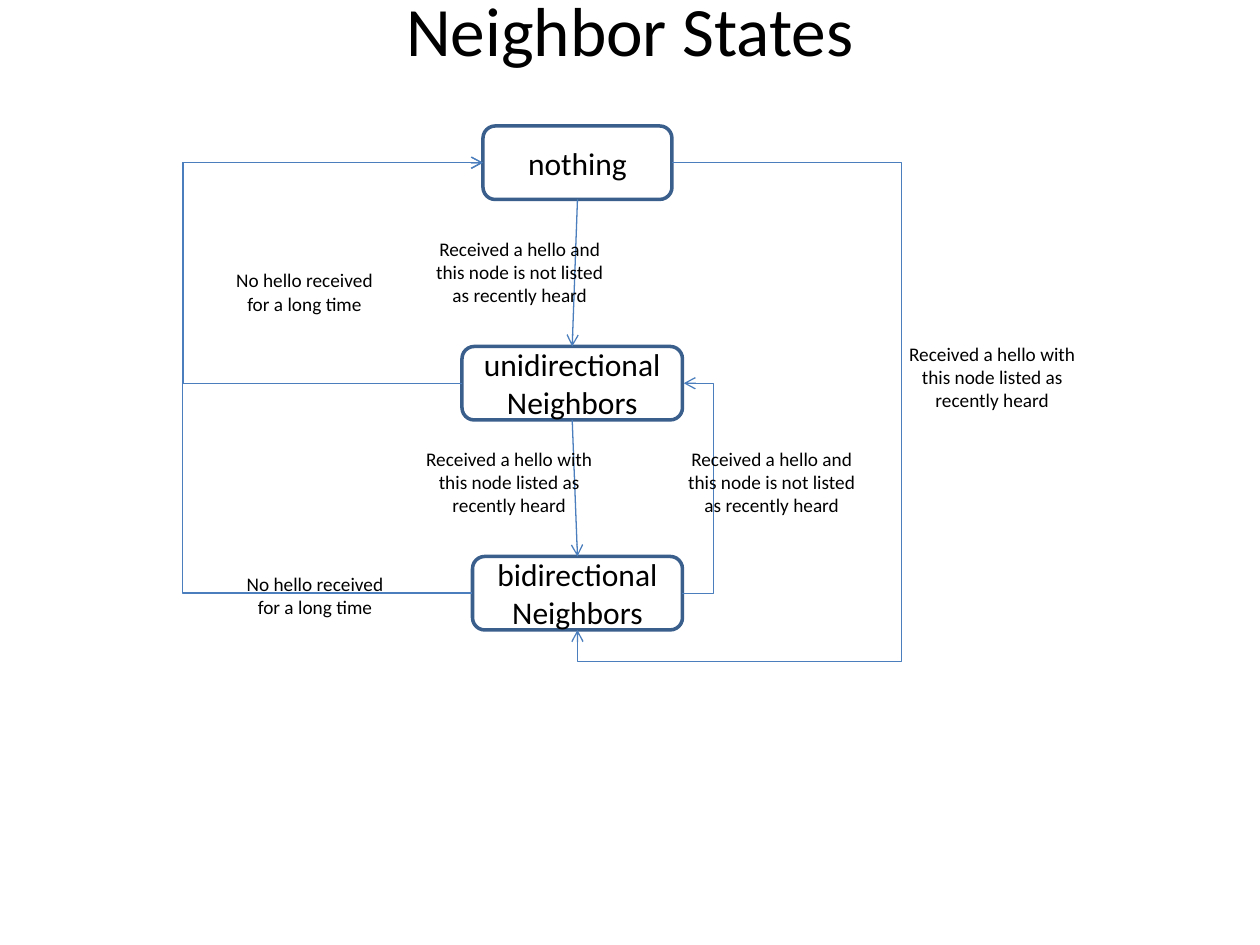
from lxml import etree
from pptx import Presentation
from pptx.dml.color import RGBColor
from pptx.enum.shapes import MSO_CONNECTOR, MSO_SHAPE
from pptx.enum.text import MSO_ANCHOR, MSO_AUTO_SIZE, PP_ALIGN
from pptx.oxml.ns import qn
from pptx.util import Inches, Pt

STRAIGHT, ELBOW = MSO_CONNECTOR.STRAIGHT, MSO_CONNECTOR.ELBOW
ROUNDED = MSO_SHAPE.ROUNDED_RECTANGLE
CENTER, MIDDLE = PP_ALIGN.CENTER, MSO_ANCHOR.MIDDLE
TOP, LEFT, BOTTOM, RIGHT = range(4)
COLORS = {"text": "000000", "border": "3A5F8C", "arrow": "4B7EBC"}
FONT = "Calibri"
TITLE_ONLY_LAYOUT = 5
CELLS_PER_INCH = 12
STATE_HEIGHT = 7

NOT_LISTED = "Received a hello and this node is not listed as recently heard"
LISTED = "Received a hello with this node listed as recently heard"
SILENT = "No hello received for a long time"
STATES = {
    "nothing": ("nothing", 46, 12, 18),
    "unidirectional": ("unidirectional\vNeighbors", 44, 33, 21),
    "bidirectional": ("bidirectional\vNeighbors", 45, 53, 20),
}
LABELS = [
    (NOT_LISTED, 40, 22, 19, 8),
    (LISTED, 39, 42, 19, 8),
    (SILENT, 21, 25, 16, 5.6),
    (LISTED, 85, 32, 19, 8),
    (SILENT, 22, 53.9, 16, 5.6),
    (NOT_LISTED, 64, 42, 19, 8),
]
LEFT_LANE, RIGHT_LANE, RETURN_LANE, BOTTOM_LANE = 17.4, 85.9, 68, 63


def grid(cells):
    return Inches(cells / CELLS_PER_INCH)


def color(name):
    return RGBColor.from_string(COLORS[name])


def write(text_frame, text, size):
    text_frame.text = text
    paragraph = text_frame.paragraphs[0]
    paragraph.alignment = CENTER
    paragraph.font.name = FONT
    paragraph.font.size = Pt(size)
    paragraph.font.color.rgb = color("text")


def set_title(slide, text):
    title = slide.shapes.title
    title.left, title.top = grid(6), grid(-1)
    title.width, title.height = grid(108), grid(7.5)
    title.text_frame.auto_size = MSO_AUTO_SIZE.NONE
    title.text_frame.vertical_anchor = MIDDLE
    write(title.text_frame, text, 39.6)


def add_state(slide, text, column, row, columns):
    shape = slide.shapes.add_shape(
        ROUNDED, grid(column), grid(row), grid(columns), grid(STATE_HEIGHT))
    shape.shadow.inherit = False
    shape.fill.background()
    shape.line.color.rgb = color("border")
    shape.line.width = Pt(2)
    shape.text_frame.word_wrap = True
    shape.text_frame.vertical_anchor = MIDDLE
    write(shape.text_frame, text, 18)
    return shape


def add_label(slide, text, column, row, columns, rows):
    label = slide.shapes.add_textbox(
        grid(column), grid(row), grid(columns), grid(rows))
    label.text_frame.word_wrap = True
    write(label.text_frame, text, 11)


def add_arrow(slide, kind, source, source_side, target, target_side):
    connector = slide.shapes.add_connector(kind, 0, 0, 0, 0)
    connector.begin_connect(source, source_side)
    connector.end_connect(target, target_side)
    connector.line.color.rgb = color("arrow")
    connector.line.width = Pt(0.75)
    etree.SubElement(connector.line._get_or_add_ln(), qn("a:tailEnd"), type="arrow")
    etree.SubElement(connector._element.spPr, qn("a:effectLst"))
    return connector


def bend(connector, lane_column, lane_row=None):
    if connector.begin_x == connector.end_x:
        connector.end_x += Inches(0.01)
    shares = [(grid(lane_column) - connector.begin_x)
              / (connector.end_x - connector.begin_x)]
    if lane_row is not None:
        shares.append((grid(lane_row) - connector.begin_y)
                      / (connector.end_y - connector.begin_y))
    geometry = connector._element.spPr.find(qn("a:prstGeom"))
    geometry.set("prst", f"bentConnector{len(shares) + 2}")
    adjustments = geometry.find(qn("a:avLst"))
    for number, share in enumerate(shares, 1):
        etree.SubElement(adjustments, qn("a:gd"), name=f"adj{number}",
                         fmla=f"val {round(share * 100000)}")


def main():
    presentation = Presentation()
    presentation.slide_width, presentation.slide_height = Inches(10), Inches(7.5)
    slide = presentation.slides.add_slide(
        presentation.slide_layouts[TITLE_ONLY_LAYOUT])
    set_title(slide, "Neighbor States")

    states = {name: add_state(slide, *state) for name, state in STATES.items()}
    nothing, unidirectional, bidirectional = states.values()

    add_arrow(slide, STRAIGHT, nothing, BOTTOM, unidirectional, TOP)
    add_arrow(slide, STRAIGHT, unidirectional, BOTTOM, bidirectional, TOP)
    bend(add_arrow(slide, ELBOW, nothing, RIGHT, bidirectional, BOTTOM),
         RIGHT_LANE, BOTTOM_LANE)
    for state in (unidirectional, bidirectional):
        bend(add_arrow(slide, ELBOW, state, LEFT, nothing, LEFT), LEFT_LANE)
    bend(add_arrow(slide, ELBOW, bidirectional, RIGHT, unidirectional, RIGHT),
         RETURN_LANE)

    for label in LABELS:
        add_label(slide, *label)
    presentation.save("out.pptx")


if __name__ == "__main__":
    main()
